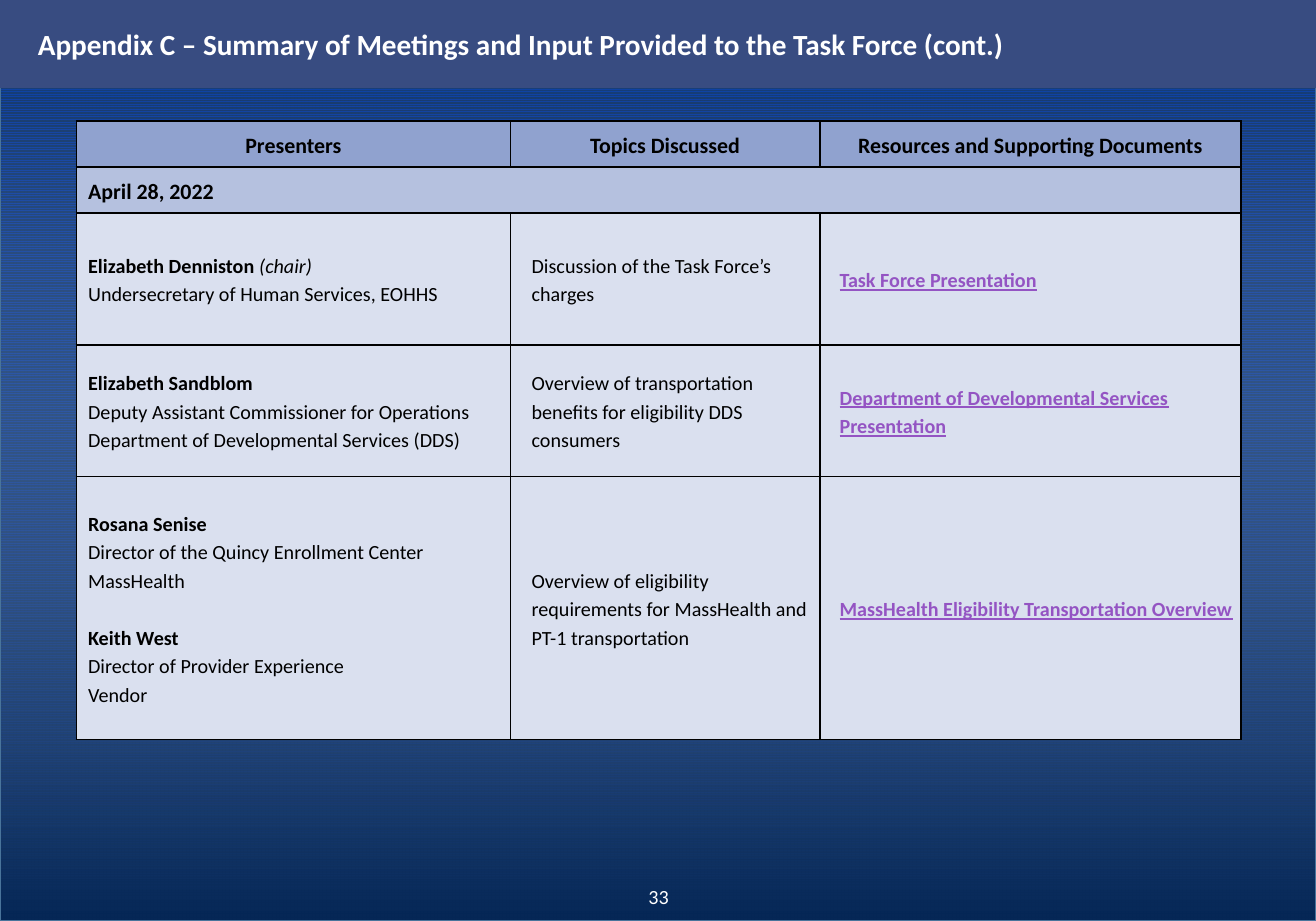
from lxml import etree
from pptx import Presentation
from pptx.dml.color import RGBColor
from pptx.enum.dml import MSO_PATTERN
from pptx.enum.shapes import MSO_SHAPE
from pptx.enum.text import MSO_ANCHOR, PP_ALIGN
from pptx.oxml.ns import qn
from pptx.util import Pt

PX = 9144  # 100 px to the inch
RECT = MSO_SHAPE.RECTANGLE
STRIPES = MSO_PATTERN.LIGHT_HORIZONTAL
MIDDLE = MSO_ANCHOR.MIDDLE
CENTER, LEFT = PP_ALIGN.CENTER, PP_ALIGN.LEFT

COLORS = {
    "stripe": "003399", "ground": "072C62", "deep": "062756",
    "haze": "B6D1FA", "edge": "49749B", "banner": "384C81",
    "glow": "0E58C4", "head": "90A2CF", "date": "B5C1DF",
    "body": "DAE0EF", "link": "9454C3", "ink": "000000", "white": "FFFFFF",
}
STYLES = {
    "title": ("white", {"size": Pt(16), "bold": True}),
    "page": ("white", {"size": Pt(11)}),
    "head": ("ink", {"size": Pt(12), "bold": True}),
    "name": ("ink", {"size": Pt(11), "bold": True}),
    "role": ("ink", {"size": Pt(11)}),
    "note": ("ink", {"size": Pt(11), "italic": True}),
    "link": ("link", {"size": Pt(11), "bold": True, "underline": True}),
}
WIDTHS = [330, 235, 320]
HEIGHTS = [35, 35, 100, 100, 200]
INDENTS = [6, 13, 12]
HEADS = ["Presenters", "Topics Discussed", "Resources and Supporting Documents"]
# Each meeting row: people (name, note, roles), topic, document
MEETINGS = [
    ([("Elizabeth Denniston", "(chair)",
       ["Undersecretary of Human Services, EOHHS"])],
     "Discussion of the Task Force’s charges",
     "Task Force Presentation"),
    ([("Elizabeth Sandblom", "",
       ["Deputy Assistant Commissioner for Operations",
        "Department of Developmental Services (DDS)"])],
     "Overview of transportation benefits for eligibility DDS consumers",
     "Department of Developmental Services Presentation"),
    ([("Rosana Senise", "",
       ["Director of the Quincy Enrollment Center", "MassHealth"]),
      ("Keith West", "", ["Director of Provider Experience", "Vendor"])],
     "Overview of eligibility requirements for MassHealth and PT-1 transportation",
     "MassHealth Eligibility Transportation Overview"),
]


def color(name):
    return RGBColor.from_string(COLORS[name])


def emu(*lengths):
    return [length * PX for length in lengths]


def assign(target, values):
    for key, value in values.items():
        setattr(target, key, value)


def add_run(para, text, style):
    run = para.add_run()
    run.text = text
    tint, values = STYLES[style]
    assign(run.font, {"name": "Calibri", **values})
    run.font.color.rgb = color(tint)


def write(frame, lines, indent=0, **values):
    """Fill a text frame; each line is a list of (text, style) runs."""
    for i, runs in enumerate(lines):
        para = frame.add_paragraph() if i else frame.paragraphs[0]
        props = para._p.get_or_add_pPr()
        props.set("marL", str(indent * PX))
        props.set("indent", "0")
        assign(para, values)
        for text, style in runs:
            add_run(para, text, style)


def add_alpha(parent, percent):
    etree.SubElement(parent, qn("a:alpha"), val=str(percent * 1000))


def add_rect(slide, *box):
    shape = slide.shapes.add_shape(RECT, *emu(*box))
    shape.shadow.inherit = False
    return shape


def add_haze(slide):
    """Cover the stripes with a gradient that clears towards the top."""
    fill = slide.background.fill
    fill.patterned()
    fill.pattern = STRIPES
    fill.fore_color.rgb = color("stripe")
    fill.back_color.rgb = color("ground")
    haze = add_rect(slide, 0, 0, 1000, 700)
    haze.fill.gradient()
    haze.fill.gradient_angle = 90
    for stop, name, spot in zip(haze.fill.gradient_stops, ("deep", "haze"), (0, 1)):
        stop.color.rgb = color(name)
        stop.position = spot
    tints = haze._element.spPr.findall(".//" + qn("a:gs"))
    add_alpha(tints[-1][0], 0)
    haze.line.color.rgb = color("edge")
    haze.line.width = Pt(1.5)


def add_banner(slide, text):
    banner = add_rect(slide, 0, 0, 1000, 67)
    banner.fill.solid()
    banner.fill.fore_color.rgb = color("banner")
    banner.line.fill.background()
    effects = banner._element.spPr.find(qn("a:effectLst"))
    shade = etree.SubElement(effects, qn("a:outerShdw"), blurRad=str(Pt(2)),
                             dist=str(Pt(4)), dir="5400000", rotWithShape="0")
    add_alpha(etree.SubElement(shade, qn("a:srgbClr"), val=COLORS["glow"]), 9)
    assign(banner.text_frame, {"word_wrap": True, "vertical_anchor": MIDDLE})
    write(banner.text_frame, [[(text, "title")]], 19, alignment=LEFT)


def add_page(slide, number):
    frame = slide.shapes.add_textbox(*emu(417, 667, 167, 33)).text_frame
    frame.word_wrap = True
    write(frame, [[(number, "page")]], alignment=CENTER)


def dress(cell, fill):
    """Give a cell its margins, borders and fill."""
    assign(cell, {"margin_left": 3 * PX, "margin_right": 3 * PX,
                  "margin_top": PX, "margin_bottom": PX,
                  "vertical_anchor": MIDDLE})
    props = cell._tc.get_or_add_tcPr()
    for side in ("lnL", "lnR", "lnT", "lnB"):
        line = etree.SubElement(props, qn("a:" + side), w=str(Pt(1)))
        ink = etree.SubElement(line, qn("a:solidFill"))
        etree.SubElement(ink, qn("a:srgbClr"), val=COLORS["ink"])
    cell.fill.solid()
    cell.fill.fore_color.rgb = color(fill)


def add_people(cell, people):
    for i, (name, note, roles) in enumerate(people):
        first = [(name + " ", "name"), (note, "note")] if note else [(name, "name")]
        lines = [first] + [[(role, "role")] for role in roles]
        if i:
            start = len(cell.text_frame.paragraphs)
            for runs in lines:
                para = cell.text_frame.add_paragraph()
                para._p.get_or_add_pPr().set("marL", str(INDENTS[0] * PX))
                para.line_spacing = 1.15
                for text, style in runs:
                    add_run(para, text, style)
            cell.text_frame.paragraphs[start].space_before = Pt(15.5)
        else:
            write(cell.text_frame, lines, INDENTS[0], line_spacing=1.15)


def add_meetings(slide, date):
    table = slide.shapes.add_table(
        len(HEIGHTS), len(WIDTHS),
        *emu(58, 92, sum(WIDTHS), sum(HEIGHTS))).table
    assign(table, {"first_row": False, "horz_banding": False})
    for column, width in zip(table.columns, WIDTHS):
        column.width = width * PX
    fills = ["head", "date"] + ["body"] * len(MEETINGS)
    for row, height, fill in zip(table.rows, HEIGHTS, fills):
        row.height = height * PX
        for cell in row.cells:
            dress(cell, fill)
    for cell, text in zip(table.rows[0].cells, HEADS):
        write(cell.text_frame, [[(text, "head")]],
              alignment=CENTER, line_spacing=1.15)
    span = table.cell(1, 0)
    span.merge(table.cell(1, 2))
    write(span.text_frame, [[(date, "head")]], INDENTS[0], line_spacing=1.15)
    for r, (people, topic, paper) in enumerate(MEETINGS, 2):
        add_people(table.cell(r, 0), people)
        for c, text, style in ((1, topic, "role"), (2, paper, "link")):
            write(table.cell(r, c).text_frame, [[(text, style)]],
                  INDENTS[c], line_spacing=1.15)


def main():
    deck = Presentation()
    deck.slide_width, deck.slide_height = emu(1000, 700)
    slide = deck.slides.add_slide(deck.slide_layouts[6])
    add_haze(slide)
    add_meetings(slide, "April 28, 2022")
    add_banner(slide, "Appendix C – Summary of Meetings and Input "
                      "Provided to the Task Force (cont.)")
    add_page(slide, "33")
    deck.save("out.pptx")


if __name__ == "__main__":
    main()
